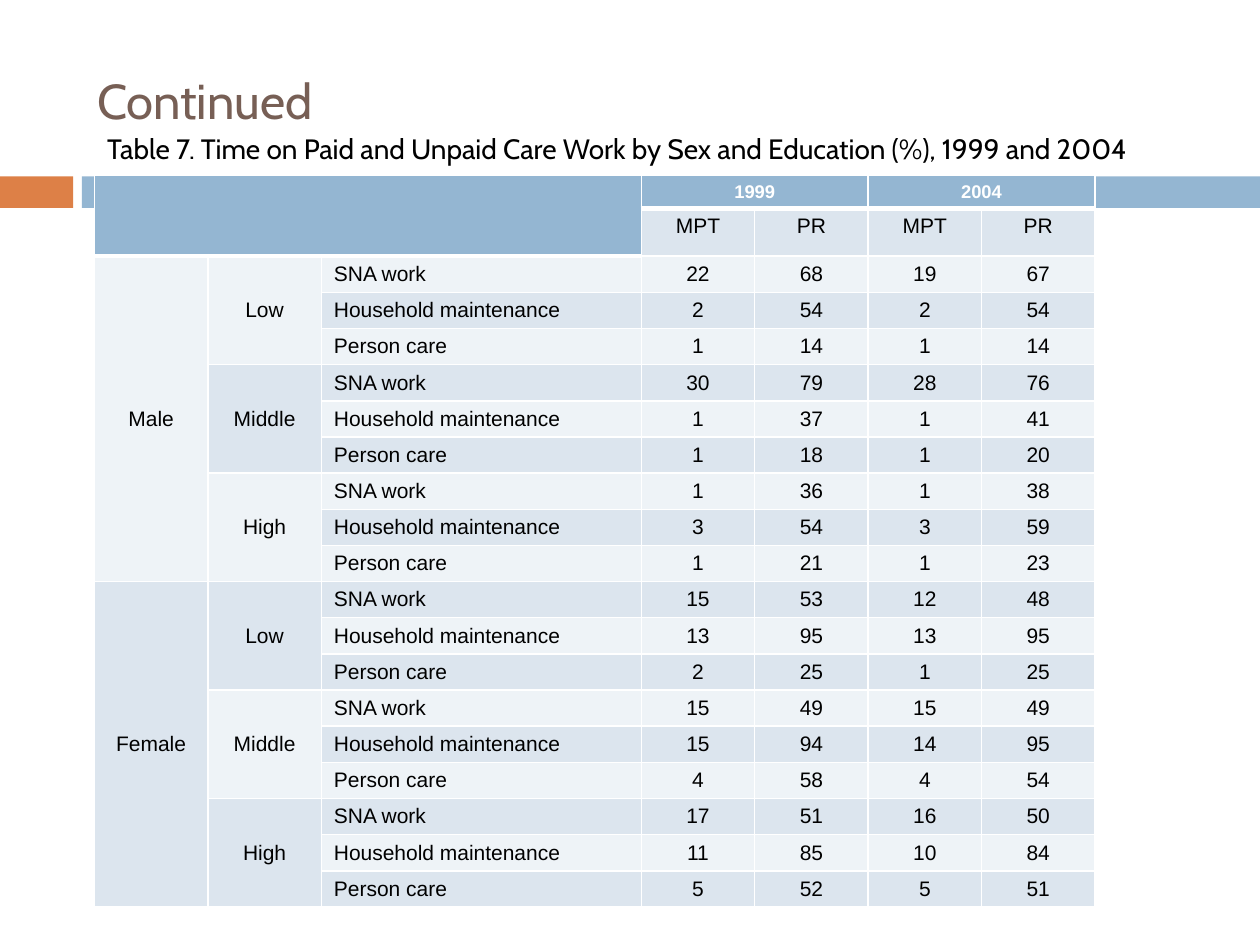
from lxml.etree import SubElement
from pptx import Presentation
from pptx.dml.color import RGBColor
from pptx.enum.shapes import MSO_SHAPE
from pptx.enum.text import MSO_ANCHOR, MSO_AUTO_SIZE, PP_ALIGN
from pptx.oxml.ns import qn
from pptx.util import Inches, Pt

ORANGE = RGBColor(0xDD, 0x80, 0x47)
BLUE = RGBColor(0x94, 0xB6, 0xD2)
BROWN = RGBColor(0x77, 0x5F, 0x55)
PALE = RGBColor(0xEE, 0xF3, 0xF7)
TINT = RGBColor(0xDC, 0xE5, 0xEE)
WHITE = RGBColor(0xFF, 0xFF, 0xFF)
BLACK = RGBColor(0, 0, 0)

SEXES = ["Male", "Female"]
LEVELS = ["Low", "Middle", "High"]
TASKS = ["SNA work", "Household maintenance", "Person care"]
VALUES = [
    (22, 68, 19, 67), (2, 54, 2, 54), (1, 14, 1, 14),
    (30, 79, 28, 76), (1, 37, 1, 41), (1, 18, 1, 20),
    (1, 36, 1, 38), (3, 54, 3, 59), (1, 21, 1, 23),
    (15, 53, 12, 48), (13, 95, 13, 95), (2, 25, 1, 25),
    (15, 49, 15, 49), (15, 94, 14, 95), (4, 58, 4, 54),
    (17, 51, 16, 50), (11, 85, 10, 84), (5, 52, 5, 51),
]
COL_WIDTHS = [0.9, 0.9, 2.54, 0.9, 0.9, 0.9, 0.9]
HEAD_ROWS = 2


def place(sp, box):
    sp.left, sp.top, sp.width, sp.height = (Inches(v) for v in box)


def format_run(r, font, size, color, bold=False):
    r.font.name = font
    r.font.size = Pt(size)
    r.font.color.rgb = color
    r.font.bold = bold


def add_band(s, box):
    left, top, width, height = box
    split, gap = 0.58, 0.07
    parts = [(left, split, ORANGE),
             (left + split + gap, width - split - gap, BLUE)]
    for i, (x, w, color) in enumerate(parts):
        sp = s.shapes.add_shape(MSO_SHAPE.RECTANGLE, Inches(x), Inches(top),
                                Inches(w), Inches(height))
        sp.shadow.inherit = False
        sp.fill.solid()
        sp.fill.fore_color.rgb = color
        sp.line.fill.background()
        sp.element.getparent().insert(2 + i, sp.element)


def fill_placeholder(sp, box, text, size, color, anchor):
    place(sp, box)
    tf = sp.text_frame
    tf.text = text
    tf.auto_size = MSO_AUTO_SIZE.NONE
    tf.word_wrap = True
    tf.vertical_anchor = anchor
    p = tf.paragraphs[0]
    p.alignment = PP_ALIGN.LEFT
    format_run(p.runs[0], "Cabin", size, color)
    return p


def add_title(s, box):
    fill_placeholder(s.shapes.title, box, "Continued", 28, BROWN,
                     MSO_ANCHOR.MIDDLE)


def add_caption(s, box):
    p = fill_placeholder(
        s.placeholders[1], box,
        "Table 7. Time on Paid and Unpaid Care Work by Sex and Education (%), "
        "1999 and 2004", 16, BLACK, MSO_ANCHOR.TOP)
    p.space_before = Pt(7)
    pPr = p._p.get_or_add_pPr()
    pPr.set("marL", str(Inches(0.35)))
    pPr.set("indent", str(Inches(-0.35)))
    SubElement(pPr, qn("a:buNone"))


def set_borders(cell, top, bottom):
    tcPr = cell._tc.get_or_add_tcPr()
    for side, width in (("L", 1), ("R", 1), ("T", top), ("B", bottom)):
        ln = SubElement(tcPr, qn(f"a:ln{side}"), w=str(Pt(width)))
        fill = SubElement(ln, qn("a:solidFill"))
        SubElement(fill, qn("a:srgbClr"), val=str(WHITE))


def style_cell(cell, row, col):
    corner = row < HEAD_ROWS and col < 3
    head = row == 0 or corner
    thick_top = row == 1 or (row == HEAD_ROWS and col < 3)
    set_borders(cell, 3 if thick_top else 1, 3 if head else 1)
    cell.fill.solid()
    cell.fill.fore_color.rgb = BLUE if head else TINT if row % 2 else PALE
    label = col < 2 and row >= HEAD_ROWS
    cell.vertical_anchor = MSO_ANCHOR.MIDDLE if label else MSO_ANCHOR.TOP
    p = cell.text_frame.paragraphs[0]
    p.alignment = PP_ALIGN.LEFT if col == 2 else PP_ALIGN.CENTER
    for r in p.runs or [p.add_run()]:
        format_run(r, "Arial", 10.5 if head else 12,
                   WHITE if head else BLACK, head)


def table_rows():
    rows = [["", "", "", "1999", "", "2004", ""],
            ["", "", "", "MPT", "PR", "MPT", "PR"]]
    for i, values in enumerate(VALUES):
        sex = SEXES[i // 9] if i % 9 == 0 else ""
        level = LEVELS[i // 3 % 3] if i % 3 == 0 else ""
        rows.append([sex, level, TASKS[i % 3], *map(str, values)])
    return rows


def add_time_table(s, box):
    rows = table_rows()
    frame = s.shapes.add_table(len(rows), len(COL_WIDTHS),
                               *(Inches(v) for v in box))
    table = frame.table
    for col, width in zip(table.columns, COL_WIDTHS):
        col.width = Inches(width)
    for i, row in enumerate(table.rows):
        row.height = Inches(0.24 if i else 0.26)
    for i, texts in enumerate(rows):
        for j, text in enumerate(texts):
            cell = table.cell(i, j)
            cell.text = text
            style_cell(cell, i, j)
    spans = [(0, 0, 2, 3), (0, 3, 1, 2), (0, 5, 1, 2)]
    spans += [(i, 0, 9, 1) for i in range(HEAD_ROWS, len(rows), 9)]
    spans += [(i, 1, 3, 1) for i in range(HEAD_ROWS, len(rows), 3)]
    for i, j, height, width in spans:
        table.cell(i, j).merge(table.cell(i + height - 1, j + width - 1))


def main():
    prs = Presentation()
    prs.slide_width, prs.slide_height = Inches(10), Inches(7.5)
    s = prs.slides.add_slide(prs.slide_layouts[1])
    add_band(s, (0, 1.4, 10, 0.25))
    add_title(s, (0.67, 0.25, 8.92, 1.08))
    add_caption(s, (0.75, 0.99, 8.92, 4.92))
    add_time_table(s, (0.75, 1.39, 7.95, 4.82))
    prs.save("out.pptx")


if __name__ == "__main__":
    main()
